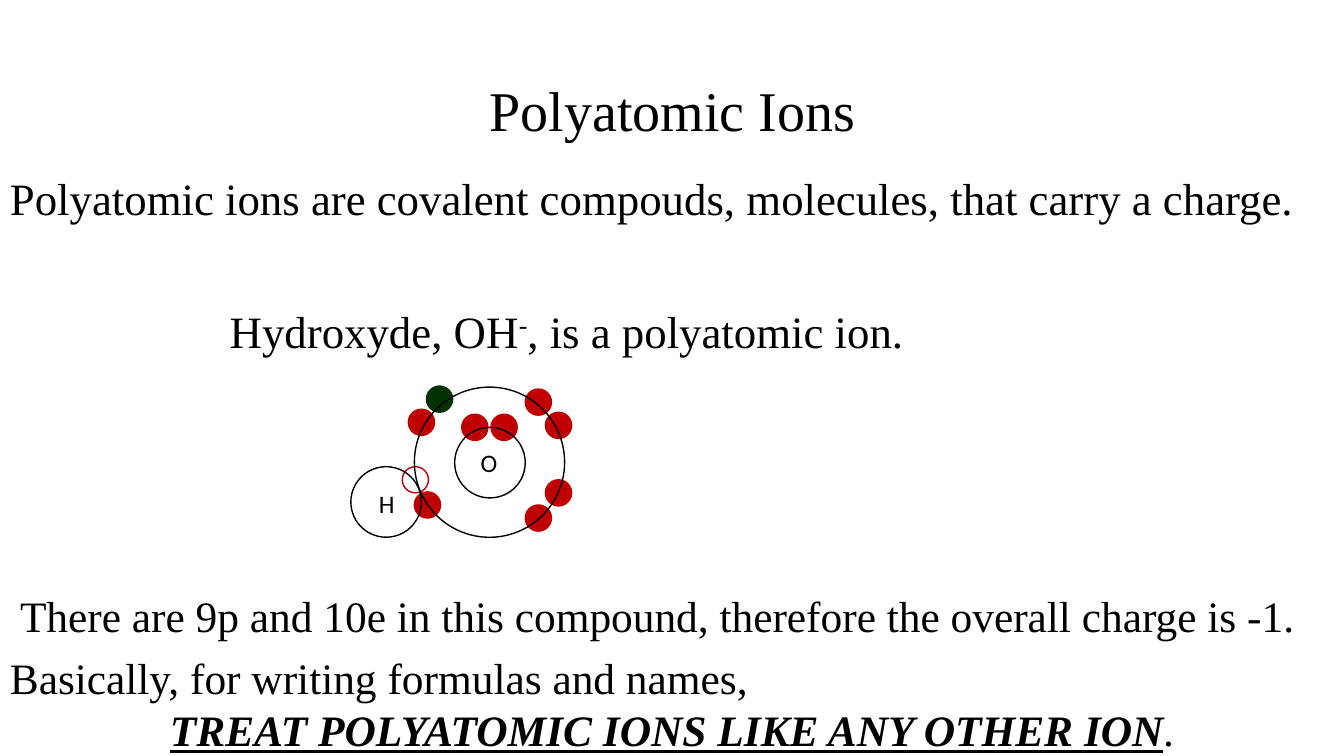
from pptx import Presentation
from pptx.dml.color import RGBColor
from pptx.enum.shapes import MSO_SHAPE
from pptx.enum.text import MSO_ANCHOR, PP_ALIGN
from pptx.util import Pt

PX = 9144  # EMU per px, 100 px to the inch
BLACK = RGBColor(0x00, 0x00, 0x00)
WHITE = RGBColor(0xFF, 0xFF, 0xFF)
RED = RGBColor(0xC0, 0x00, 0x00)
GREEN = RGBColor(0x00, 0x33, 0x00)
SERIF = "Times New Roman"
ELECTRON = 26
NUCLEUS = 70
SHELL = 149


def box(left, top, width, height):
    return [v * PX for v in (left, top, width, height)]


def add_run(p, text, size=32, font=SERIF, strong=False, superscript=False):
    r = p.add_run()
    r.text = text
    r.font.size = Pt(size)
    r.font.name = font
    r.font.color.rgb = BLACK
    if strong:
        r.font.bold = r.font.italic = r.font.underline = True
    if superscript:
        r.font._element.set("baseline", "30000")


def add_text(s, area, *paragraphs, align=PP_ALIGN.LEFT, anchor=MSO_ANCHOR.TOP,
             spacing=None, wrap=True, **run_format):
    """Each paragraph is a string or a list of (text, format) runs."""
    tf = s.shapes.add_textbox(*box(*area)).text_frame
    tf.word_wrap = wrap
    tf.vertical_anchor = anchor
    for i, runs in enumerate(paragraphs):
        p = tf.add_paragraph() if i else tf.paragraphs[0]
        p.alignment = align
        if spacing:
            p.line_spacing = spacing
        if isinstance(runs, str):
            runs = [(runs, {})]
        for text, extra in runs:
            add_run(p, text, **{**run_format, **extra})
    return tf


def add_circle(s, left, top, size, line=BLACK, fill=None):
    sp = s.shapes.add_shape(MSO_SHAPE.OVAL, *box(left, top, size, size))
    sp.shadow.inherit = False
    if fill is None:
        sp.fill.background()
    else:
        sp.fill.solid()
        sp.fill.fore_color.rgb = fill
    sp.line.color.rgb = line
    sp.line.width = Pt(1)


def add_electrons(s, spots, color=RED):
    for left, top in spots:
        add_circle(s, left, top, ELECTRON, line=color, fill=color)


def add_hydroxide(s):
    # Oxygen nucleus over its inner electrons
    add_text(s, (467, 439, 37, 40), "O", size=18, font="Calibri", wrap=False)
    add_electrons(s, [(458, 411), (487, 411), (521, 501), (411, 488), (541, 409)])
    add_circle(s, 451, 424, NUCLEUS)

    # Outer electrons, with the extra one in green
    add_electrons(s, [(423, 383)], GREEN)
    add_electrons(s, [(405, 406), (521, 386), (541, 476)])

    # Hydrogen with its shared electron, then the outer shell
    add_text(s, (366, 480, 36, 40), "H", size=18, font="Calibri", wrap=False)
    add_circle(s, 399, 463, ELECTRON, line=RED, fill=WHITE)
    add_circle(s, 348, 463, NUCLEUS)
    add_circle(s, 411, 384, SHELL)


def main():
    prs = Presentation()
    prs.slide_width, prs.slide_height = 1333 * PX, 750 * PX
    s = prs.slides.add_slide(prs.slide_layouts[6])

    # Title and definition
    add_text(s, (92, 40, 1150, 145), "Polyatomic Ions", size=40, spacing=0.9,
             align=PP_ALIGN.CENTER, anchor=MSO_ANCHOR.MIDDLE)
    add_text(s, (0, 170, 1300, 140),
             "Polyatomic ions are covalent compouds, molecules, that carry a charge.",
             spacing=0.9)

    # Example ion
    add_text(s, (218, 296, 890, 64),
             [("Hydroxyde, OH", {}), ("-", {"superscript": True}),
              (", is a polyatomic ion.", {})])
    add_text(s, (10, 579, 1291, 62),
             "There are 9p and 10e in this compound, therefore the overall charge is -1.",
             size=31)
    add_hydroxide(s)

    # Rule to remember
    tf = add_text(s, (0, 641, 1333, 114),
                  "Basically, for writing formulas and names,",
                  [("TREAT POLYATOMIC IONS LIKE ANY OTHER ION", {"strong": True}),
                   (".", {})],
                  size=31)
    tf.paragraphs[1].alignment = PP_ALIGN.CENTER

    prs.save("out.pptx")


if __name__ == "__main__":
    main()
